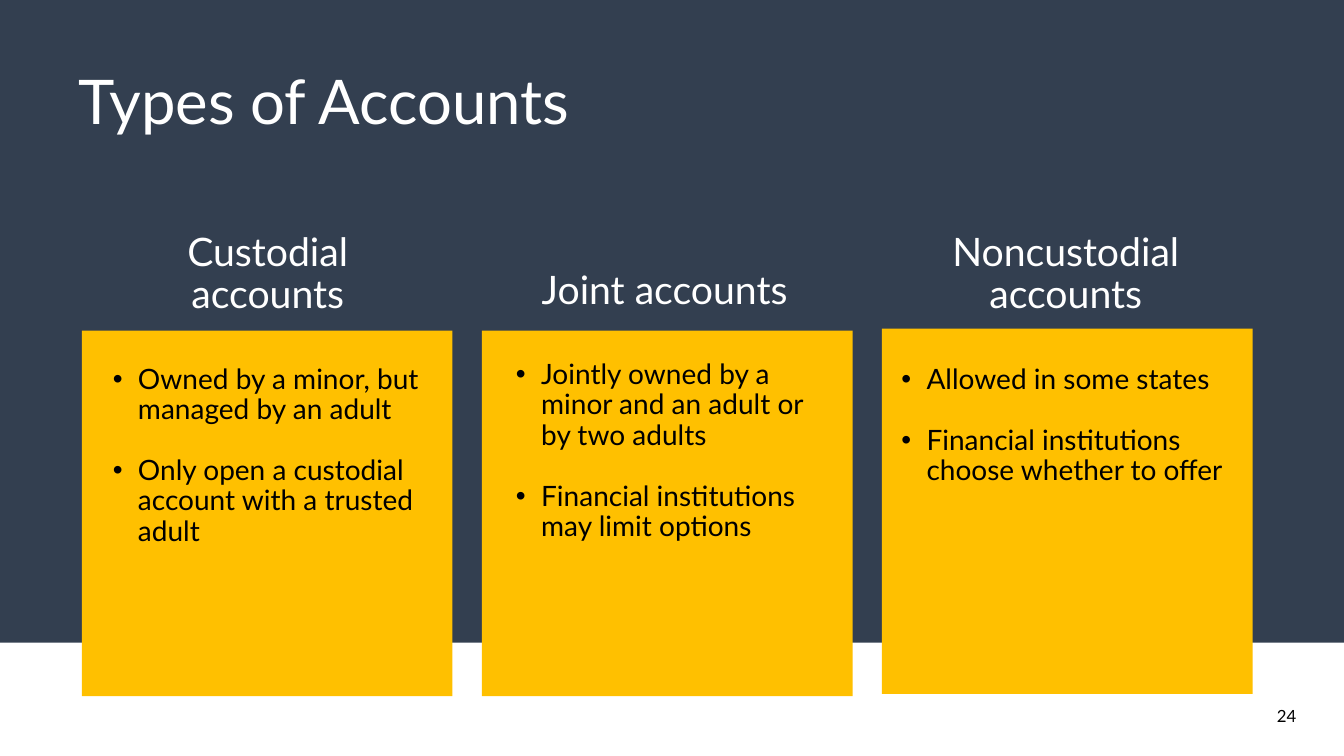
from pptx import Presentation
from pptx.dml.color import RGBColor
from pptx.enum.shapes import MSO_SHAPE
from pptx.enum.text import MSO_ANCHOR, PP_ALIGN
from pptx.oxml.ns import qn
from pptx.util import Emu, Pt
from lxml.etree import SubElement

PIXEL = 9525
NAVY, GOLD, WHITE, BLACK = "333F50", "FFC000", "FFFFFF", "000000"

# Heading, bullets, card top, text box (left, top, width, height)
ACCOUNTS = [
    ("Custodial accounts",
     ["Owned by a minor, but managed by an adult",
      "Only open a custodial account with a trusted adult"],
     315, (98, 217, 314, 396)),
    ("Joint accounts",
     ["Jointly owned by a minor and an adult or by two adults",
      "Financial institutions may limit options"],
     315, (482, 253, 302, 410)),
    ("Noncustodial accounts",
     ["Allowed in some states",
      "Financial institutions choose whether to offer"],
     313, (849, 217, 332, 462)),
]
CARD_LEFT, CARD_STEP, CARD_WIDTH, CARD_HEIGHT = 78, 381, 353, 348


def px(length):
    return Emu(length * PIXEL)


def color(hex_string):
    return RGBColor.from_string(hex_string)


def add_rectangle(slide, box, fill):
    shape = slide.shapes.add_shape(MSO_SHAPE.RECTANGLE, *map(px, box))
    shape.shadow.inherit = False
    shape.fill.solid()
    shape.fill.fore_color.rgb = color(fill)
    shape.line.fill.background()


def add_text_frame(slide, box, anchor=MSO_ANCHOR.TOP):
    text_frame = slide.shapes.add_textbox(*map(px, box)).text_frame
    text_frame.word_wrap = True
    text_frame.vertical_anchor = anchor
    return text_frame


def write(paragraph, text, size, fill, align=PP_ALIGN.LEFT, line=0.9,
          before=0, after=0, bullet=False):
    paragraph.alignment = align
    paragraph.line_spacing = line
    paragraph.space_before = Pt(before)
    paragraph.space_after = Pt(after)
    if bullet:
        properties = paragraph._p.get_or_add_pPr()
        properties.set("marL", str(px(24)))
        properties.set("indent", str(px(-24)))
        SubElement(properties, qn("a:buFont")).set("typeface", "Arial")
        SubElement(properties, qn("a:buChar")).set("char", "•")
    run = paragraph.add_run()
    run.text = text
    run.font.name = "Lato"
    run.font.size = Pt(size)
    run.font.color.rgb = color(fill)


def place_title(slide, box, text):
    title = slide.shapes.title
    title.left, title.top, title.width, title.height = map(px, box)
    title.text_frame.vertical_anchor = MSO_ANCHOR.MIDDLE
    write(title.text_frame.paragraphs[0], text, 44, WHITE)


def add_account(slide, card_box, text_box, heading, bullets):
    add_rectangle(slide, card_box, GOLD)
    text_frame = add_text_frame(slide, text_box)
    write(text_frame.paragraphs[0], heading, 28, WHITE,
          align=PP_ALIGN.CENTER, after=24)
    for bullet in bullets:
        write(text_frame.add_paragraph(), bullet, 20, BLACK,
              before=10, after=12, bullet=True)


def add_page_number(slide, box, number):
    text_frame = add_text_frame(slide, box, MSO_ANCHOR.MIDDLE)
    write(text_frame.paragraphs[0], number, 12, BLACK,
          align=PP_ALIGN.RIGHT, line=1.0)


def main():
    presentation = Presentation()
    presentation.slide_width, presentation.slide_height = px(1280), px(720)
    slide = presentation.slides.add_slide(presentation.slide_layouts[5])

    # Dark backdrop, moved behind the title
    add_rectangle(slide, (0, 0, 1280, 612), NAVY)
    slide.shapes.title._element.addprevious(slide.shapes[-1]._element)
    place_title(slide, (65, 30, 1104, 139), "Types of Accounts")

    # Account columns
    for column, (heading, bullets, top, text_box) in enumerate(ACCOUNTS):
        left = CARD_LEFT + column * CARD_STEP
        card_box = (left, top, CARD_WIDTH, CARD_HEIGHT)
        add_account(slide, card_box, text_box, heading, bullets)

    add_page_number(slide, (896, 663, 348, 38), "24")
    presentation.save("out.pptx")


if __name__ == "__main__":
    main()
